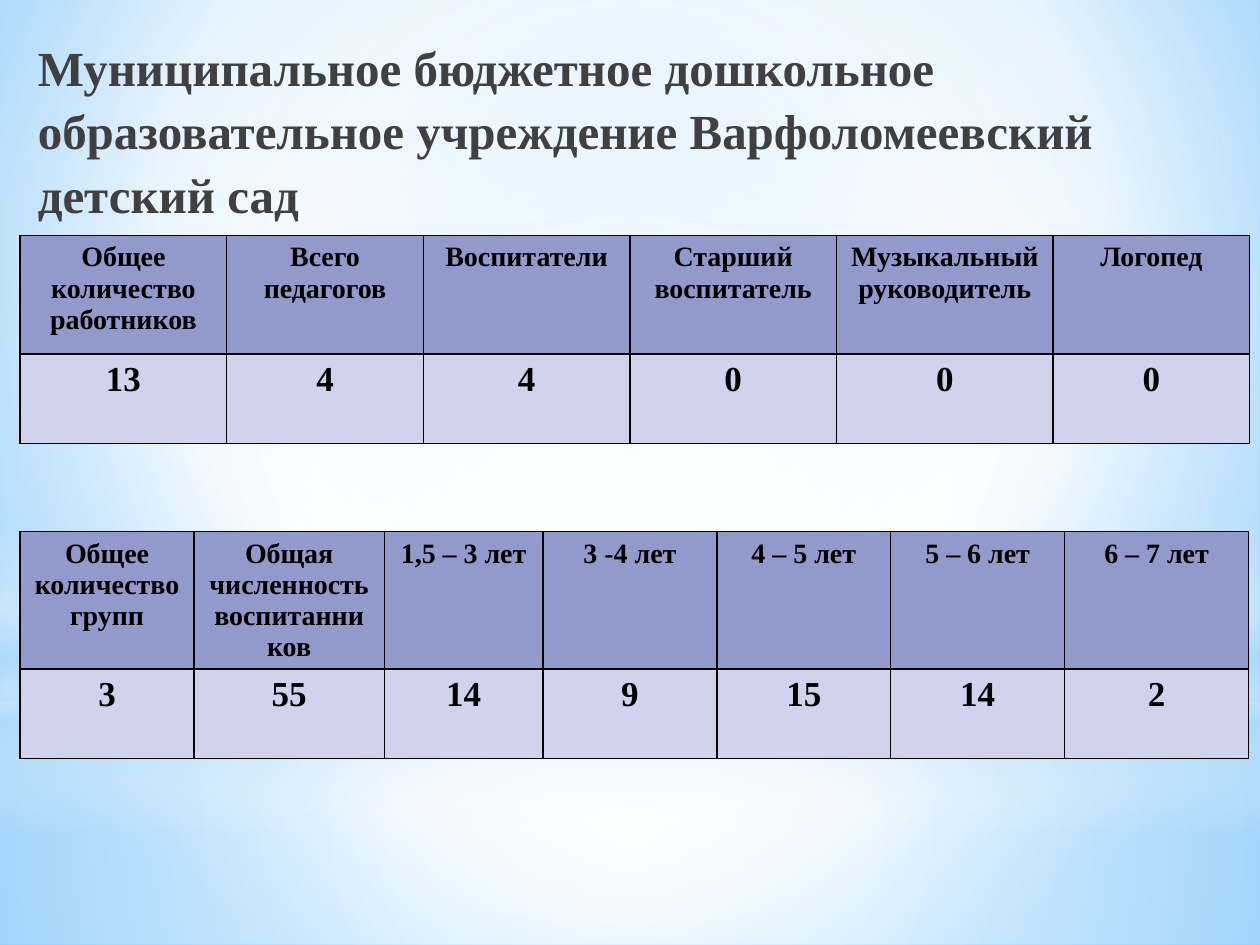
from lxml.etree import SubElement
from pptx import Presentation
from pptx.dml.color import RGBColor
from pptx.enum.shapes import MSO_SHAPE
from pptx.enum.text import MSO_ANCHOR, PP_ALIGN
from pptx.oxml.ns import qn
from pptx.util import Inches, Pt

COLORS = {
    "white": "FFFFFF", "haze": "B4DCFA", "sky": "9ED5FF", "deep_sky": "5BB9FF",
    "title": "404040", "ink": "000000", "header": "919ACA", "value": "D0D3EB",
}


def set_gradient(fill, owner, stops, focus=None):
    """Give (position, color, opacity) stops; focus is the circle's l, t, r, b, else top to bottom."""
    fill.gradient()
    gradient = next(owner.iter(qn("a:gradFill")))
    for child in list(gradient):
        gradient.remove(child)
    stop_list = SubElement(gradient, qn("a:gsLst"))
    for position, color, opacity in stops:
        stop = SubElement(stop_list, qn("a:gs"), pos=str(position * 1000))
        tint = SubElement(stop, qn("a:srgbClr"), val=COLORS[color])
        if opacity < 100:
            SubElement(tint, qn("a:alpha"), val=str(opacity * 1000))
    if focus:
        path = SubElement(gradient, qn("a:path"), path="circle")
        sides = {side: str(share * 1000) for side, share in zip("ltrb", focus)}
        SubElement(path, qn("a:fillToRect"), **sides)
    else:
        SubElement(gradient, qn("a:lin"), ang="5400000", scaled="0")


def write_text(frame, text, size, color="ink", align=PP_ALIGN.CENTER, spacing=None):
    paragraph = frame.paragraphs[0]
    paragraph.alignment = align
    paragraph.line_spacing = spacing
    run = paragraph.add_run()
    run.text = text
    run.font.name = "Times New Roman"
    run.font.size = Pt(size)
    run.font.bold = True
    run.font.color.rgb = RGBColor.from_string(COLORS[color])


prs = Presentation()
prs.slide_width, prs.slide_height = Inches(10), Inches(7.5)
slide = prs.slides.add_slide(prs.slide_layouts[5])

# Background glow
set_gradient(slide.background.fill, slide.element,
             [(0, "sky", 100), (60, "white", 100), (100, "deep_sky", 100)], (20, 10, 20, 60))
center = (50, 50, 50, 50)
glows = [
    (MSO_SHAPE.RECTANGLE, 5.58, 1.92, center,
     [(0, "white", 91), (37, "white", 76), (100, "haze", 79)]),
    (MSO_SHAPE.RECTANGLE, 0, 5.58, center,
     [(0, "white", 89), (48, "white", 62), (100, "haze", 79)]),
    (MSO_SHAPE.RECTANGLE, 4.12, 2.5, None,
     [(0, "white", 0), (29, "white", 30), (45, "haze", 40),
      (55, "white", 26), (65, "haze", 60), (100, "white", 0)]),
    (MSO_SHAPE.OVAL, 1.75, 5.58, center, [(0, "white", 100), (56, "white", 0)]),
]
for outline, top, height, focus, stops in glows:
    glow = slide.shapes.add_shape(outline, 0, Inches(top), Inches(10), Inches(height))
    glow.shadow.inherit = False
    glow.line.fill.background()
    set_gradient(glow.fill, glow.element, stops, focus)

# Title, brought in front of the glow
title = slide.shapes.title
title.element.getparent().append(title.element)
title.left, title.top = Inches(0.2), Inches(0.21)
title.width, title.height = Inches(9.37), Inches(1.25)
title.text_frame.word_wrap = True
title.text_frame.vertical_anchor = MSO_ANCHOR.TOP
write_text(title.text_frame,
           "Муниципальное бюджетное дошкольное образовательное учреждение "
           "Варфоломеевский детский сад",
           size=28, color="title", align=PP_ALIGN.LEFT, spacing=1.08)

# Staff and pupils: top, column widths, row heights, headings, values
counts = [
    (1.87, [1.64, 1.56, 1.64, 1.64, 1.72, 1.56], [0.94, 0.71],
     ["Общее количество работников", "Всего педагогов", "Воспитатели",
      "Старший воспитатель", "Музыкальный руководитель", "Логопед"],
     ["13", "4", "4", "0", "0", "0"]),
    (4.22, [1.38, 1.51, 1.26, 1.38, 1.38, 1.38, 1.46], [1.09, 0.71],
     ["Общее количество групп", "Общая численность воспитанников", "1,5 – 3 лет",
      "3 -4 лет", "4 – 5 лет", "5 – 6 лет", "6 – 7 лет"],
     ["3", "55", "14", "9", "15", "14", "2"]),
]
row_styles = [("header", 16), ("value", 20)]
for top, widths, heights, headings, values in counts:
    table = slide.shapes.add_table(2, len(widths), Inches(0.16), Inches(top),
                                   Inches(sum(widths)), Inches(sum(heights))).table
    for column, width in zip(table.columns, widths):
        column.width = Inches(width)
    for row, height, texts, (shade, size) in zip(table.rows, heights, (headings, values), row_styles):
        row.height = Inches(height)
        for cell, text in zip(row.cells, texts):
            write_text(cell.text_frame, text, size=size)
            properties = cell._tc.get_or_add_tcPr()
            for side in ("lnL", "lnR", "lnT", "lnB"):
                border = SubElement(properties, qn(f"a:{side}"), w=str(Pt(1)))
                border_fill = SubElement(border, qn("a:solidFill"))
                SubElement(border_fill, qn("a:srgbClr"), val=COLORS["ink"])
            cell.fill.solid()
            cell.fill.fore_color.rgb = RGBColor.from_string(COLORS[shade])

prs.save("out.pptx")
